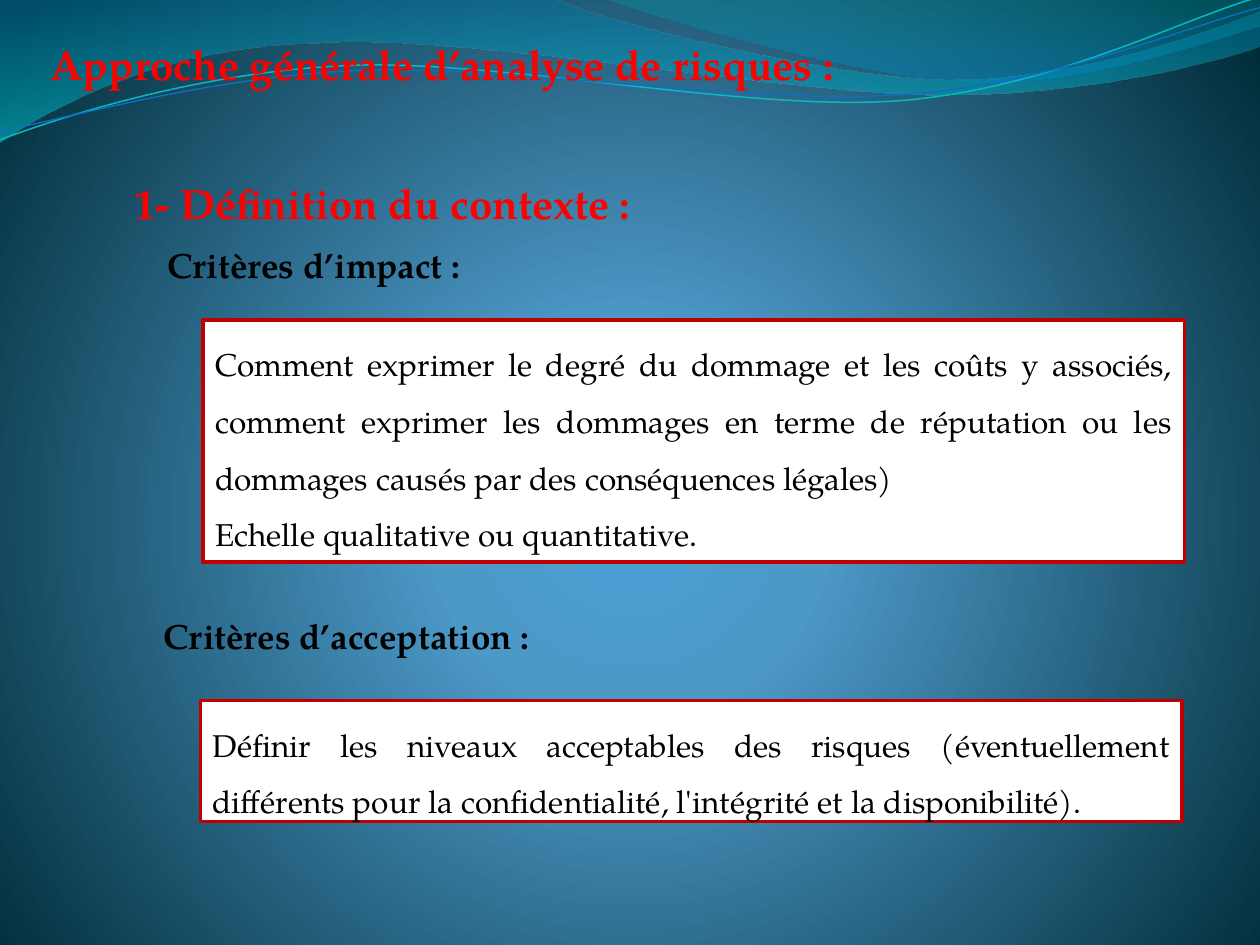
"""Build the risk analysis slide: waves, headings and framed criteria."""

import dataclasses
import math
import typing

import pptx
import pptx.dml.color
import pptx.enum.shapes
import pptx.enum.text
import pptx.oxml
import pptx.oxml.ns
import pptx.util

Point = tuple[float, float]
Stop = tuple[int, str, int]
COLUMNS, ROWS = 10, 7.5
CELL = pptx.util.Inches(1)


@dataclasses.dataclass(frozen=True)
class Theme:
    """Colours, font and type sizes of the slide."""

    font: str = "TeX Gyre Pagella"
    heading: str = "FF0000"
    ink: str = "000000"
    paper: str = "FFFFFF"
    frame: str = "C00000"
    heading_size: int = 24
    label_size: int = 20
    body_size: int = 18
    frame_width: float = 2
    backdrop: tuple[Stop, ...] = ((0, "4AA0D6", 100), (25, "4C98C7", 100), (100, "002C38", 100))
    left_wave: tuple[Stop, ...] = ((0, "0074A1", 45), (100, "00C6CF", 55))
    right_wave: tuple[Stop, ...] = ((0, "00A1A9", 30), (80, "008BBF", 45))
    teal_line: str = "0AB8BF"
    blue_line: str = "0F6FC6"


@dataclasses.dataclass(frozen=True)
class Wave:
    """An outline whose segments hold one point for a line, three for a curve."""

    bounds: tuple[float, float, float, float]
    start: Point
    segments: tuple[tuple[Point, ...], ...]
    stops: tuple[Stop, ...] = ()
    line: str = ""
    line_width: float = 0
    rotation: float = 0


@dataclasses.dataclass(frozen=True)
class Block:
    """A text block placed in grid columns and rows."""

    column: float
    row: float
    width: float
    height: float
    paragraphs: tuple[str, ...]
    size: int
    color: str
    framed: bool = False


THEME = Theme()
WAVES = (
    Wave((-0.01, -0.01, 10.02, 1.14), (0, 0), (
        ((4.4, -0.01),),
        ((4.76, 0.17), (6.64, 0.63), (7.58, 0.63)),
        ((8.53, 0.63), (9.58, 0.26), (10, 0.09)),
        ((10.01, 0.36),),
        ((9.83, 0.44), (8.7, 0.76), (7.46, 0.75)),
        ((6.22, 0.75), (3.82, 0.28), (2.57, 0.34)),
        ((1.29, 0.36), (0.46, 0.83), (-0.01, 1.13)),
        ((0, 0),),
    ), stops=THEME.left_wave),
    Wave((4.79, -0.01, 5.21, 0.7), (4.79, -0.01), (
        ((5.09, 0.11), (6.82, 0.62), (7.69, 0.65)),
        ((8.56, 0.69), (9.61, 0.32), (10, 0.21)),
        ((10, 0),),
        ((4.79, -0.01),),
    ), stops=THEME.right_wave),
    Wave((-0.02, 0.22, 10.02, 0.71), (0, 1.11), (
        ((0.48, 0.93), (1.58, 0.57), (2.77, 0.52)),
        ((3.95, 0.47), (5.93, 0.89), (7.13, 0.8)),
        ((8.33, 0.71), (9.38, 0.15), (9.98, -0.02)),
    ), line=THEME.teal_line, line_width=0.85, rotation=357.3),
    Wave((-0.02, 0.3, 10.03, 0.58), (0, 1.04), (
        ((0.47, 0.96), (1.64, 0.61), (2.83, 0.56)),
        ((4.03, 0.51), (5.97, 0.84), (7.17, 0.75)),
        ((8.36, 0.67), (9.41, 0.21), (10, 0.06)),
    ), line=THEME.blue_line, line_width=0.75, rotation=357.3),
)
BLOCKS = (
    Block(1.61, 2.54, 7.79, 1.92, (
        "Comment exprimer le degré du dommage et les coûts y associés, comment exprimer les "
        "dommages en terme de réputation ou les dommages causés par des conséquences légales)",
        "Echelle qualitative ou quantitative.",
    ), THEME.body_size, THEME.ink, framed=True),
    Block(1.23, 1.88, 6.97, 0.44, ("Critères d’impact :",), THEME.label_size, THEME.ink),
    Block(1.59, 5.56, 7.79, 0.96, (
        "Définir les niveaux acceptables des risques (éventuellement différents pour la "
        "confidentialité, l'intégrité et la disponibilité).",
    ), THEME.body_size, THEME.ink, framed=True),
    Block(1.2, 4.83, 6.97, 0.44, ("Critères d’acceptation :",), THEME.label_size, THEME.ink),
    Block(0.3, 0.26, 8.06, 0.5, ("Approche générale d’analyse de risques :",),
          THEME.heading_size, THEME.heading),
    Block(0.97, 1.36, 5.05, 0.5, ("1- Définition du contexte :",),
          THEME.heading_size, THEME.heading),
)


def rgb(color: str) -> pptx.dml.color.RGBColor:
    return pptx.dml.color.RGBColor.from_string(color)


def cells(*values: float) -> tuple[int, ...]:
    return tuple(round(value * CELL) for value in values)


def assign(target: typing.Any, values: dict[str, typing.Any]) -> None:
    for name, value in values.items():
        setattr(target, name, value)


def replace_part(owner: typing.Any, tag: str, markup: str) -> None:
    old = owner.find(".//" + pptx.oxml.ns.qn(tag))
    old.getparent().replace(old, pptx.oxml.parse_xml(markup))


def apply_gradient(owner: typing.Any, fill: typing.Any, stops: tuple[Stop, ...], direction: str) -> None:
    fill.gradient()
    stop_list = ""
    for position, color, opacity in stops:
        alpha = f'<a:alpha val="{opacity * 1000}"/>' if opacity < 100 else ""
        stop_list += f'<a:gs pos="{position * 1000}"><a:srgbClr val="{color}">{alpha}</a:srgbClr></a:gs>'
    replace_part(owner, "a:gradFill", f'<a:gradFill {pptx.oxml.ns.nsdecls("a")} rotWithShape="1">'
                 f"<a:gsLst>{stop_list}</a:gsLst>{direction}</a:gradFill>")


def outline(wave: Wave) -> str:
    left, top, width, height = wave.bounds
    angle = math.radians(-wave.rotation)

    def mark(point: Point) -> str:
        across, down = point[0] - left - width / 2, point[1] - top - height / 2
        x, y = cells(across * math.cos(angle) - down * math.sin(angle) + width / 2,
                     across * math.sin(angle) + down * math.cos(angle) + height / 2)
        return f'<a:pt x="{x}" y="{y}"/>'

    steps = f"<a:moveTo>{mark(wave.start)}</a:moveTo>"
    for segment in wave.segments:
        tag = "a:cubicBezTo" if len(segment) == 3 else "a:lnTo"
        steps += f"<{tag}>{''.join(map(mark, segment))}</{tag}>"
    closing = "<a:close/>" if wave.stops else ""
    path_width, path_height = cells(width, height)
    return (f'<a:path {pptx.oxml.ns.nsdecls("a")} w="{path_width}" h="{path_height}">'
            f"{steps}{closing}</a:path>")


def draw_wave(slide: typing.Any, wave: Wave) -> None:
    builder = slide.shapes.build_freeform(*cells(*wave.start))
    builder.add_line_segments([cells(*segment[-1]) for segment in wave.segments], close=False)
    shape = builder.convert_to_shape()
    replace_part(shape.element, "a:path", outline(wave))
    assign(shape, dict(zip(("left", "top", "width", "height"), cells(*wave.bounds))))
    shape.rotation = wave.rotation
    shape.shadow.inherit = False
    if wave.stops:
        apply_gradient(shape.element, shape.fill, wave.stops, '<a:lin ang="5400000" scaled="1"/>')
        shape.line.fill.background()
    else:
        shape.fill.background()
        shape.line.color.rgb = rgb(wave.line)
        shape.line.width = pptx.util.Pt(wave.line_width)


def draw_block(slide: typing.Any, block: Block) -> None:
    bounds = cells(block.column, block.row, block.width, block.height)
    if block.framed:
        shape = slide.shapes.add_shape(pptx.enum.shapes.MSO_SHAPE.RECTANGLE, *bounds)
        shape.shadow.inherit = False
        shape.fill.solid()
        shape.fill.fore_color.rgb = rgb(THEME.paper)
        shape.line.color.rgb = rgb(THEME.frame)
        shape.line.width = pptx.util.Pt(THEME.frame_width)
    else:
        shape = slide.shapes.add_textbox(*bounds)
    frame = shape.text_frame
    frame.text = "\n".join(block.paragraphs)
    assign(frame, {"word_wrap": True, "vertical_anchor": pptx.enum.text.MSO_ANCHOR.TOP,
                   "auto_size": pptx.enum.text.MSO_AUTO_SIZE.SHAPE_TO_FIT_TEXT})
    alignment = pptx.enum.text.PP_ALIGN.JUSTIFY if block.framed else pptx.enum.text.PP_ALIGN.LEFT
    for paragraph in frame.paragraphs:
        assign(paragraph, {"alignment": alignment, "line_spacing": 1.5 if block.framed else None})
        font = paragraph.runs[0].font
        assign(font, {"name": THEME.font, "size": pptx.util.Pt(block.size), "bold": not block.framed})
        font.color.rgb = rgb(block.color)


def main() -> None:
    presentation = pptx.Presentation()
    presentation.slide_width, presentation.slide_height = cells(COLUMNS, ROWS)
    slide = presentation.slides.add_slide(presentation.slide_layouts[6])
    center = '<a:path path="circle"><a:fillToRect l="10000" t="110000" r="10000" b="100000"/></a:path>'
    apply_gradient(slide.element, slide.background.fill, THEME.backdrop, center)
    for wave in WAVES:
        draw_wave(slide, wave)
    for block in BLOCKS:
        draw_block(slide, block)
    presentation.save("out.pptx")


if __name__ == "__main__":
    main()
